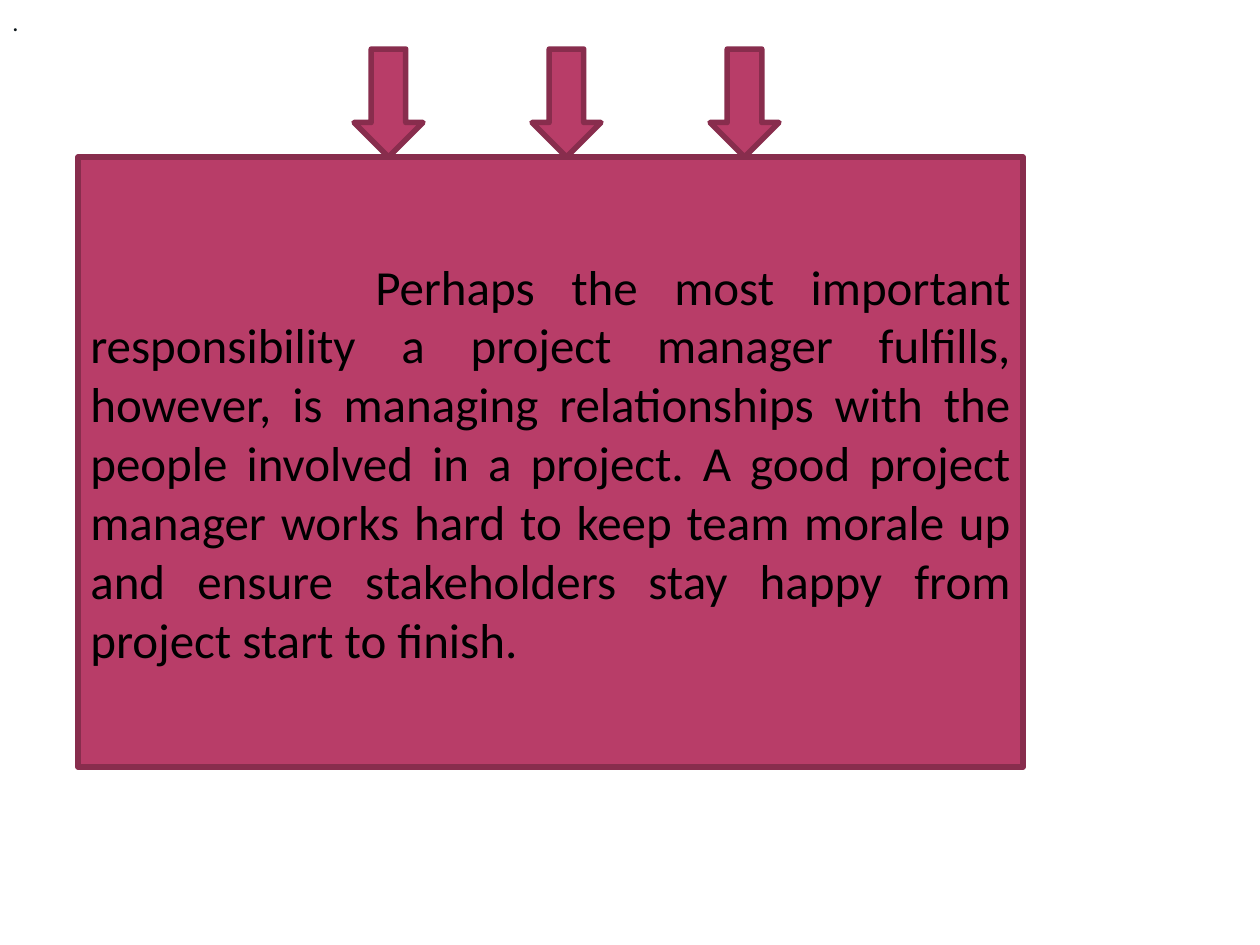
"""Build a slide with three arrows pointing down at a statement about project managers."""
from dataclasses import dataclass

from pptx import Presentation
from pptx.dml.color import RGBColor
from pptx.enum.shapes import MSO_SHAPE
from pptx.enum.text import MSO_ANCHOR, MSO_AUTO_SIZE, PP_ALIGN
from pptx.shapes.autoshape import Shape
from pptx.slide import Slide
from pptx.util import Emu, Pt

RECTANGLE = MSO_SHAPE.RECTANGLE
DOWN_ARROW = MSO_SHAPE.DOWN_ARROW
MIDDLE = MSO_ANCHOR.MIDDLE
JUSTIFY = PP_ALIGN.JUSTIFY
LEFT = PP_ALIGN.LEFT
FIT_SHAPE = MSO_AUTO_SIZE.SHAPE_TO_FIT_TEXT
NO_FIT = MSO_AUTO_SIZE.NONE

PINK = RGBColor(0xB8, 0x3D, 0x68)
DARK_PINK = RGBColor(0x88, 0x2D, 0x4D)
BLACK = RGBColor(0, 0, 0)
INK = RGBColor(0x0C, 0x16, 0x1A)

PX_PER_INCH = 126
FONT = "Calibri"
FIRST_LINE_INDENT = 285
ARROW_COUNT, ARROW_LEFT, ARROW_STEP = 3, 354, 178
STATEMENT = (
    "Perhaps the most important responsibility a project manager fulfills, "
    "however, is managing relationships with the people involved in a project. "
    "A good project manager works hard to keep team morale up and ensure "
    "stakeholders stay happy from project start to finish."
)


@dataclass(frozen=True)
class Box:
    left: int
    top: int
    width: int
    height: int

    def emu(self) -> tuple[Emu, ...]:
        return tuple(px(n) for n in (self.left, self.top, self.width, self.height))


def px(length: int) -> Emu:
    return Emu(round(length * 914400 / PX_PER_INCH))


def set_all(target: object, values: dict) -> None:
    for attribute, value in values.items():
        setattr(target, attribute, value)


def draw_block(slide: Slide, preset: MSO_SHAPE, box: Box) -> Shape:
    block = slide.shapes.add_shape(preset, *box.emu())
    block.shadow.inherit = False
    block.fill.solid()
    block.fill.fore_color.rgb = PINK
    block.line.color.rgb = DARK_PINK
    block.line.width = Pt(3.15)
    return block


def write(shape: Shape, text: str, size: int, color: RGBColor,
          align: PP_ALIGN, frame_format: dict) -> None:
    frame = shape.text_frame
    set_all(frame, {"vertical_anchor": MIDDLE, **frame_format})
    paragraph = frame.paragraphs[0]
    paragraph.alignment = align
    run = paragraph.add_run()
    run.text = text
    set_all(run.font, {"name": FONT, "size": Pt(size)})
    run.font.color.rgb = color


def main() -> None:
    deck = Presentation()
    set_all(deck, {"slide_width": px(1260), "slide_height": px(945)})
    slide = deck.slides.add_slide(deck.slide_layouts[6])

    panel = draw_block(slide, RECTANGLE, Box(78, 157, 945, 610))
    write(panel, STATEMENT, 28, BLACK, JUSTIFY,
          {"word_wrap": True, "auto_size": NO_FIT})
    properties = panel.text_frame.paragraphs[0]._p.get_or_add_pPr()
    properties.set("indent", str(px(FIRST_LINE_INDENT)))

    dot = slide.shapes.add_textbox(*Box(0, 0, 31, 43).emu())
    write(dot, ".", 14, INK, LEFT, {"word_wrap": False, "auto_size": FIT_SHAPE})

    for index in range(ARROW_COUNT):
        draw_block(slide, DOWN_ARROW,
                   Box(ARROW_LEFT + index * ARROW_STEP, 49, 69, 108))

    deck.save("out.pptx")


if __name__ == "__main__":
    main()
